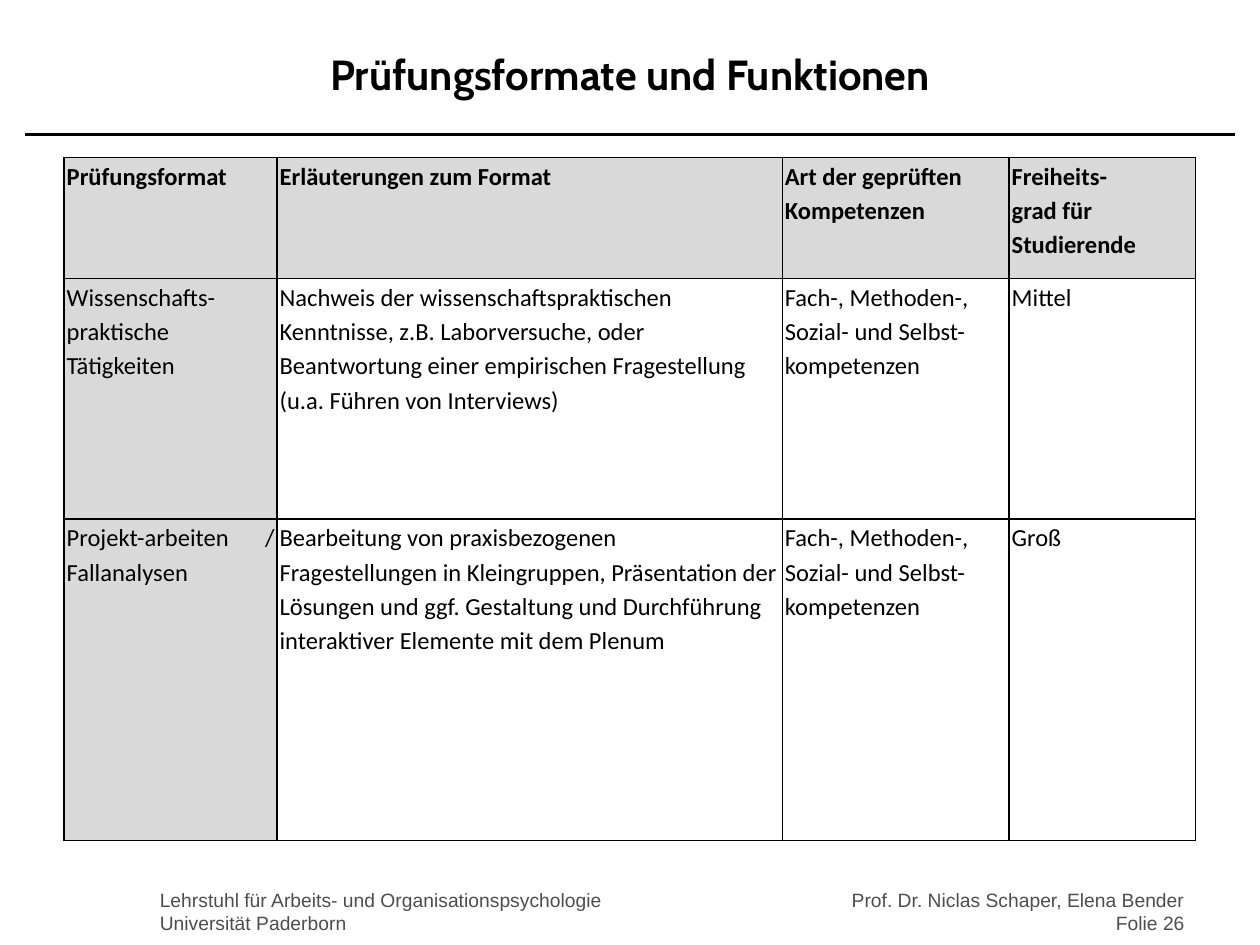
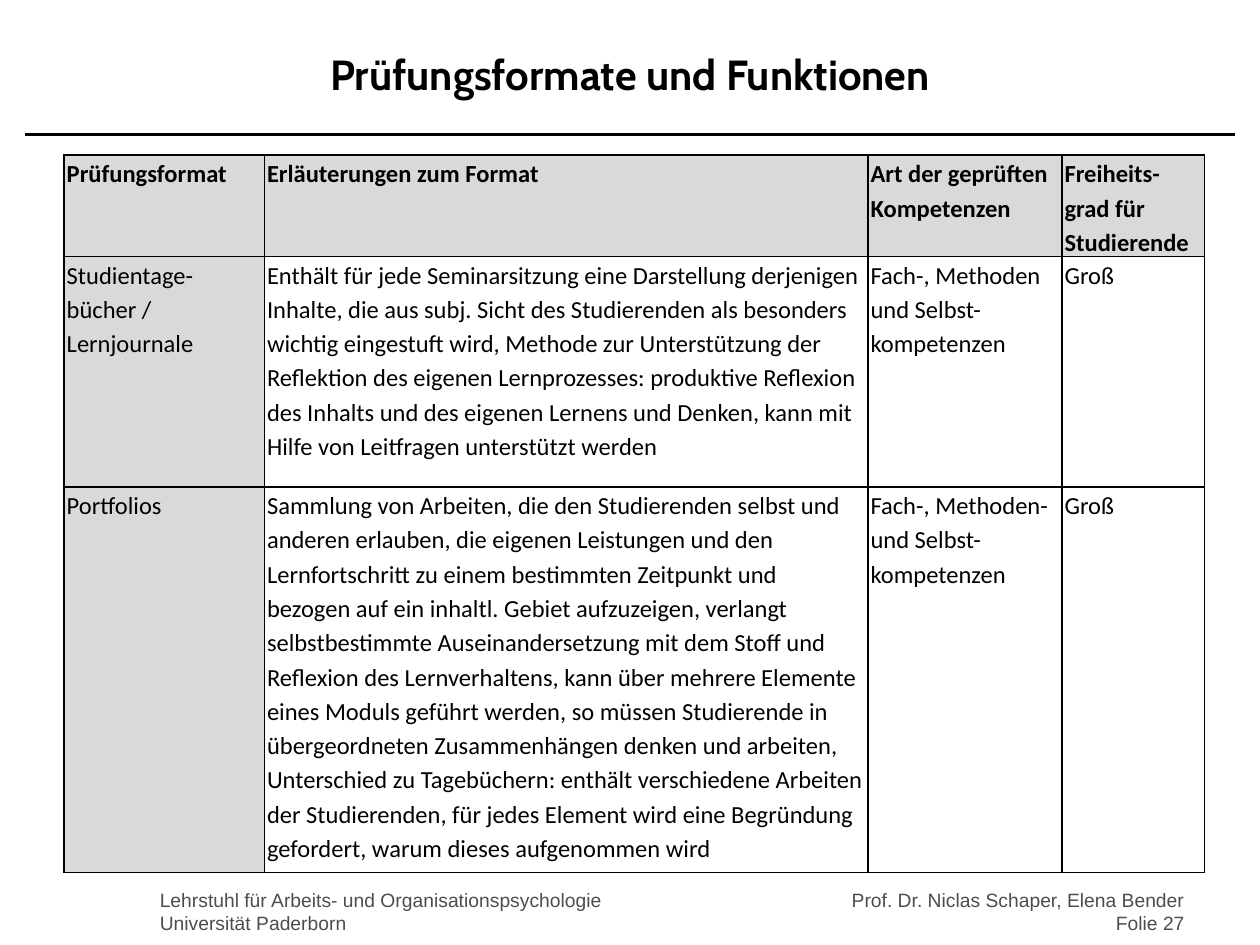
from dataclasses import dataclass
from typing import NamedTuple

from lxml.etree import SubElement
from pptx import Presentation
from pptx.dml.color import RGBColor
from pptx.enum.shapes import MSO_CONNECTOR
from pptx.enum.text import MSO_ANCHOR, PP_ALIGN
from pptx.oxml.ns import qn
from pptx.util import Inches, Length, Pt


# Shared look
@dataclass(frozen=True)
class Theme:
    ink: RGBColor = RGBColor(0x00, 0x00, 0x00)
    muted: RGBColor = RGBColor(0x4D, 0x4D, 0x4D)
    shade: RGBColor = RGBColor(0xD9, 0xD9, 0xD9)
    title_font: str = "Cabin"
    table_font: str = "Calibri"
    footer_font: str = "Arial"
    title_size: Length = Pt(24)
    table_size: Length = Pt(14)
    footer_size: Length = Pt(11)
    rule_width: Length = Pt(1.5)
    border_width: Length = Pt(1)
    cell_inset: Length = Inches(0.02)
    line_spacing: float = 1.15


class Frame(NamedTuple):
    """Left, top, width and height in grid units."""
    left: float
    top: float
    width: float
    height: float


class Footer(NamedTuple):
    frame: Frame
    lines: list[str]
    alignment: PP_ALIGN


@dataclass(frozen=True)
class FormatSlide:
    number: int
    top: float
    columns: list[float]
    rows: list[float]
    entries: list[list[str]]


THEME = Theme()

# The slide is a grid of 100 columns and 75 rows
GRID_COLUMNS, GRID_ROWS = 100, 75
SLIDE_WIDTH, SLIDE_HEIGHT = Inches(10), Inches(7.5)
TITLE_FRAME = Frame(5, 1.7, 90, 8.3)
CHAIR_FRAME = Frame(11.7, 70, 43.3, 5)
AUTHOR_FRAME = Frame(50.8, 70, 44.2, 5)
RULE_ROW, RULE_MARGIN = 10.7, 2
TABLE_LEFT = 5.1

TITLE = "Prüfungsformate und Funktionen"
CHAIR = ["Lehrstuhl für Arbeits- und Organisationspsychologie", "Universität Paderborn"]
AUTHORS = "Prof. Dr. Niclas Schaper, Elena Bender"
HEADINGS = [
    "Prüfungsformat",
    "Erläuterungen zum Format",
    "Art der geprüften Kompetenzen",
    "Freiheits-\vgrad für Studierende",
]
ALL_COMPETENCES = "Fach-, Methoden-, Sozial- und Selbst- kompetenzen"

SLIDES = [
    FormatSlide(26, 12.5, [16.9, 40.1, 18, 14.8], [9.6, 19.1, 25.5], [
        ["Wissenschafts-praktische Tätigkeiten",
         "Nachweis der wissenschaftspraktischen Kenntnisse, z.B. Laborversuche, oder "
         "Beantwortung einer empirischen Fragestellung (u.a. Führen von Interviews)",
         ALL_COMPETENCES, "Mittel"],
        ["Projekt-arbeiten / Fallanalysen",
         "Bearbeitung von praxisbezogenen Fragestellungen in Kleingruppen, Präsentation "
         "der Lösungen und ggf. Gestaltung und Durchführung interaktiver Elemente mit "
         "dem Plenum",
         ALL_COMPETENCES, "Groß"],
    ]),
    FormatSlide(27, 12.3, [15.9, 47.9, 15.4, 11.3], [7.8, 18.3, 30.6], [
        ["Studientage-bücher /\nLernjournale",
         "Enthält für jede Seminarsitzung eine Darstellung derjenigen Inhalte, die aus "
         "subj. Sicht des Studierenden als besonders wichtig eingestuft wird, Methode zur "
         "Unterstützung der Reflektion des eigenen Lernprozesses: produktive Reflexion des "
         "Inhalts und des eigenen Lernens und Denken, kann mit Hilfe von Leitfragen "
         "unterstützt werden",
         "Fach-, Methoden und Selbst-kompetenzen", "Groß"],
        ["Portfolios",
         "Sammlung von Arbeiten, die den Studierenden selbst und anderen erlauben, die "
         "eigenen Leistungen und den Lernfortschritt zu einem bestimmten Zeitpunkt und "
         "bezogen auf ein inhaltl. Gebiet aufzuzeigen, verlangt selbstbestimmte "
         "Auseinandersetzung mit dem Stoff und Reflexion des Lernverhaltens, kann über "
         "mehrere Elemente eines Moduls geführt werden, so müssen Studierende in "
         "übergeordneten Zusammenhängen denken und arbeiten, Unterschied zu Tagebüchern: "
         "enthält verschiedene Arbeiten der Studierenden, für jedes Element wird eine "
         "Begründung gefordert, warum dieses aufgenommen wird",
         "Fach-, Methoden- und Selbst-kompetenzen", "Groß"],
    ]),
]


# Grid helpers
def across(columns: float) -> Length:
    return Length(round(SLIDE_WIDTH * columns / GRID_COLUMNS))


def down(rows: float) -> Length:
    return Length(round(SLIDE_HEIGHT * rows / GRID_ROWS))


def place(frame: Frame) -> tuple[Length, Length, Length, Length]:
    return across(frame.left), down(frame.top), across(frame.width), down(frame.height)


def style(paragraph, name: str, size: Length, color: RGBColor, bold: bool = False,
          alignment: PP_ALIGN = PP_ALIGN.LEFT) -> None:
    paragraph.alignment = alignment
    font = paragraph.font
    font.name, font.size, font.bold = name, size, bold
    font.color.rgb = color


# Title, rule and footers
def add_title(page) -> None:
    title = page.shapes.title
    title.left, title.top, title.width, title.height = place(TITLE_FRAME)
    title.text_frame.text = TITLE
    title.text_frame.vertical_anchor = MSO_ANCHOR.MIDDLE
    style(title.text_frame.paragraphs[0], THEME.title_font, THEME.title_size,
          THEME.ink, True, PP_ALIGN.CENTER)


def add_rule(page) -> None:
    height = down(RULE_ROW)
    rule = page.shapes.add_connector(
        MSO_CONNECTOR.STRAIGHT, across(RULE_MARGIN), height,
        across(GRID_COLUMNS - RULE_MARGIN), height)
    rule.line.color.rgb = THEME.ink
    rule.line.width = THEME.rule_width
    SubElement(rule.element.spPr, qn("a:effectLst"))


def add_footer(page, footer: Footer) -> None:
    box = page.shapes.add_textbox(*place(footer.frame))
    box.text_frame.word_wrap = True
    box.text_frame.text = "\n".join(footer.lines)
    for paragraph in box.text_frame.paragraphs:
        style(paragraph, THEME.footer_font, THEME.footer_size, THEME.muted,
              alignment=footer.alignment)


# Table of examination formats
def add_borders(cell) -> None:
    properties = cell._tc.get_or_add_tcPr()
    for side in ("a:lnL", "a:lnR", "a:lnT", "a:lnB"):
        line = SubElement(properties, qn(side), w=str(THEME.border_width))
        fill = SubElement(line, qn("a:solidFill"))
        SubElement(fill, qn("a:srgbClr"), val=str(THEME.ink))


def fill_cell(cell, text: str, row: int, column: int) -> None:
    is_heading = row == 0
    add_borders(cell)
    if is_heading or column == 0:
        cell.fill.solid()
        cell.fill.fore_color.rgb = THEME.shade
    else:
        cell.fill.background()
    cell.margin_left = cell.margin_right = THEME.cell_inset
    cell.margin_top = cell.margin_bottom = 0
    cell.text_frame.text = text
    justified = column == 0 or (is_heading and column == 1)
    for paragraph in cell.text_frame.paragraphs:
        style(paragraph, THEME.table_font, THEME.table_size, THEME.ink, is_heading,
              PP_ALIGN.JUSTIFY if justified else PP_ALIGN.LEFT)
        paragraph.line_spacing = THEME.line_spacing


def add_format_table(page, content: FormatSlide) -> None:
    frame = Frame(TABLE_LEFT, content.top, sum(content.columns), sum(content.rows))
    table = page.shapes.add_table(
        len(content.rows), len(content.columns), *place(frame)).table
    table.first_row = table.horz_banding = False
    for column, width in zip(table.columns, content.columns):
        column.width = across(width)
    for row, height in zip(table.rows, content.rows):
        row.height = down(height)
    for row, texts in enumerate([HEADINGS, *content.entries]):
        for column, text in enumerate(texts):
            fill_cell(table.cell(row, column), text, row, column)


def add_format_slide(deck, content: FormatSlide) -> None:
    page = deck.slides.add_slide(deck.slide_layouts.get_by_name("Title Only"))
    add_rule(page)
    add_footer(page, Footer(CHAIR_FRAME, CHAIR, PP_ALIGN.LEFT))
    add_footer(page, Footer(AUTHOR_FRAME, [AUTHORS, f"Folie {content.number}"],
                            PP_ALIGN.RIGHT))
    add_title(page)
    add_format_table(page, content)


def main() -> None:
    deck = Presentation()
    deck.slide_width, deck.slide_height = SLIDE_WIDTH, SLIDE_HEIGHT
    for content in SLIDES:
        add_format_slide(deck, content)
    deck.save("out.pptx")


if __name__ == "__main__":
    main()
